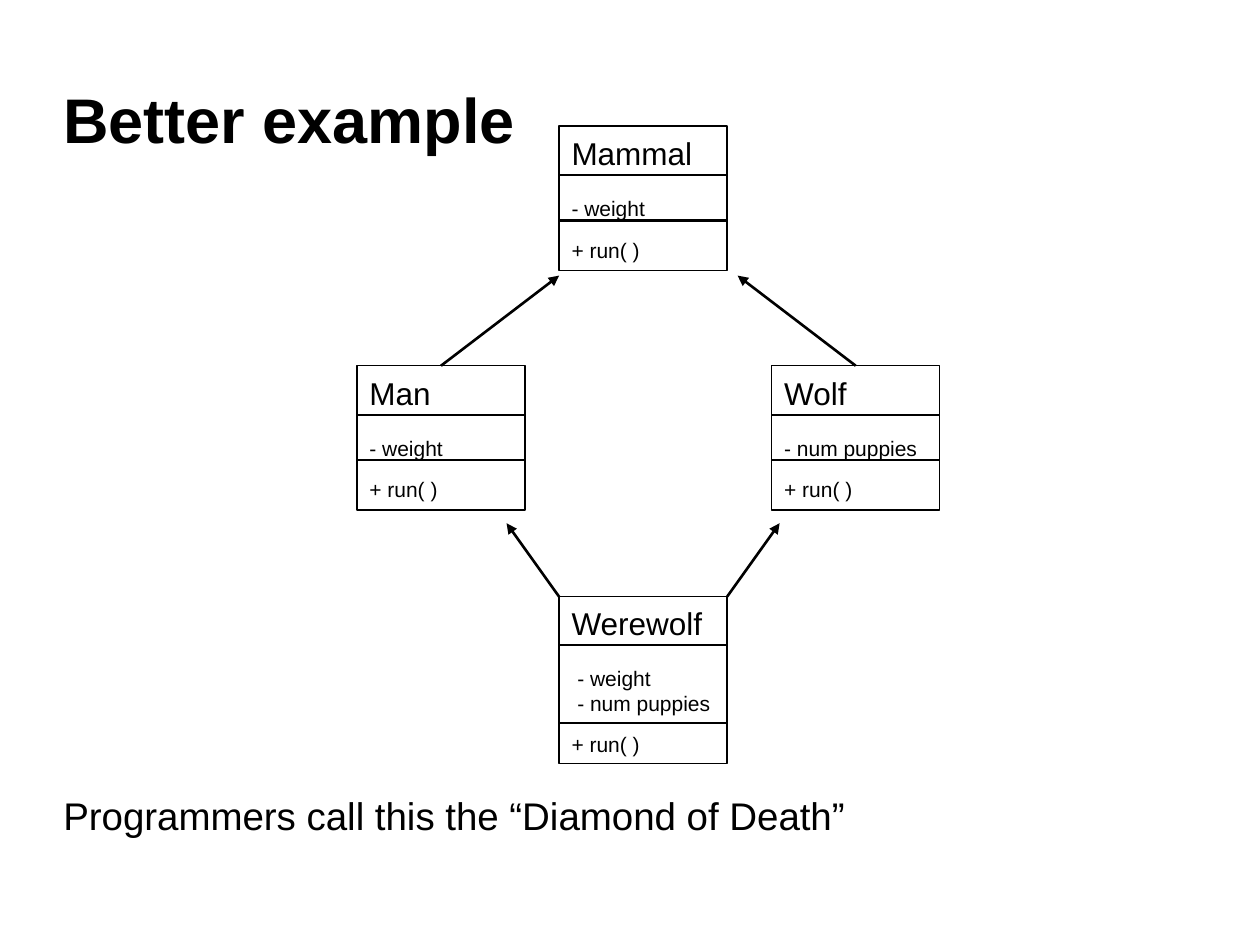
from pptx import Presentation
from pptx.dml.color import RGBColor
from pptx.enum.shapes import MSO_CONNECTOR, MSO_SHAPE
from pptx.enum.text import MSO_ANCHOR, MSO_AUTO_SIZE, PP_ALIGN
from pptx.oxml.ns import qn
from pptx.util import Pt
from lxml import etree

STRAIGHT = MSO_CONNECTOR.STRAIGHT
RECTANGLE = MSO_SHAPE.RECTANGLE
MIDDLE, TOP = MSO_ANCHOR.MIDDLE, MSO_ANCHOR.TOP
NO_FIT = MSO_AUTO_SIZE.NONE
LEFT = PP_ALIGN.LEFT

BLACK = "000000"
FONT = "Arial"
BOX_WIDTH = 96


def color(value):
    return RGBColor.from_string(value)


def prepare_frame(shape, anchor):
    frame = shape.text_frame
    frame.word_wrap = True
    frame.auto_size = NO_FIT
    frame.vertical_anchor = anchor
    frame.margin_left = frame.margin_right = Pt(7.2)
    frame.margin_top = frame.margin_bottom = Pt(3.6)
    return frame


def write(para, text, size=12, bold=False, before=0, indent=0, spacing=1.0):
    properties = para._p.get_or_add_pPr()
    properties.set("marL", str(Pt(indent)))
    properties.set("indent", "0")
    etree.SubElement(properties, qn("a:buNone"))
    para.alignment = LEFT
    para.line_spacing = spacing
    para.space_before = Pt(before)
    span = para.add_run()
    span.text = text
    span.font.name = FONT
    span.font.size = Pt(size)
    span.font.bold = bold
    span.font.color.rgb = color(BLACK)


def fill_placeholder(shape, place, text, anchor, **text_format):
    shape.left, shape.top, shape.width, shape.height = map(Pt, place)
    frame = prepare_frame(shape, anchor)
    write(frame.paragraphs[0], text, spacing=0.9, **text_format)


def add_line(page, start, end, weight, arrow=False):
    line = page.shapes.add_connector(STRAIGHT, *map(Pt, (*start, *end)))
    line.line.color.rgb = color(BLACK)
    line.line.width = Pt(weight)
    if arrow:
        etree.SubElement(line.line._get_or_add_ln(), qn("a:tailEnd"), type="triangle")
    etree.SubElement(line._element.spPr, qn("a:effectLst"))


def add_class(page, name, left, top, height, dividers, attributes, indent=0):
    box = page.shapes.add_shape(RECTANGLE, *map(Pt, (left, top, BOX_WIDTH, height)))
    box.shadow.inherit = False
    box.fill.background()
    box.line.color.rgb = color(BLACK)
    box.line.width = Pt(0.75)
    frame = prepare_frame(box, MIDDLE)
    write(frame.paragraphs[0], name, size=18)
    for number, attribute in enumerate(attributes):
        before = 0 if number else 13.8
        write(frame.add_paragraph(), attribute, before=before, indent=indent)
    write(frame.add_paragraph(), "+ run( )", before=9.2)
    for offset in dividers:
        y = top + offset
        add_line(page, (left, y), (left + BOX_WIDTH, y), 1.25)


def main():
    deck = Presentation()
    deck.slide_width, deck.slide_height = Pt(720), Pt(540)
    page = deck.slides.add_slide(deck.slide_layouts[1])
    title, body = page.placeholders
    fill_placeholder(title, (29, 40, 663, 60.5), "Better example", MIDDLE,
                     size=36, bold=True)
    fill_placeholder(body, (29, 452, 485, 42),
                     "Programmers call this the “Diamond of Death”", TOP, size=22)

    classes = [
        ("Man", 204, 209, 82.5, (28, 54), ["- weight"], 0),
        ("Wolf", 441, 209, 82.5, (28, 54), ["- num puppies"], 0),
        ("Werewolf", 319.5, 341, 95.5, (27.5, 72), ["- weight", "- num puppies"], 3.3),
        ("Mammal", 319.5, 72, 82.5, (28, 54), ["- weight"], 0),
    ]
    for item in classes:
        add_class(page, *item)

    arrows = [
        ((319.5, 341), (289.5, 299)),
        ((415.5, 341), (445.5, 299)),
        ((252, 209), (319.5, 157.5)),
        ((489, 209), (421.5, 157.5)),
    ]
    for start, end in arrows:
        add_line(page, start, end, 1.5, arrow=True)

    deck.save("out.pptx")


if __name__ == "__main__":
    main()
